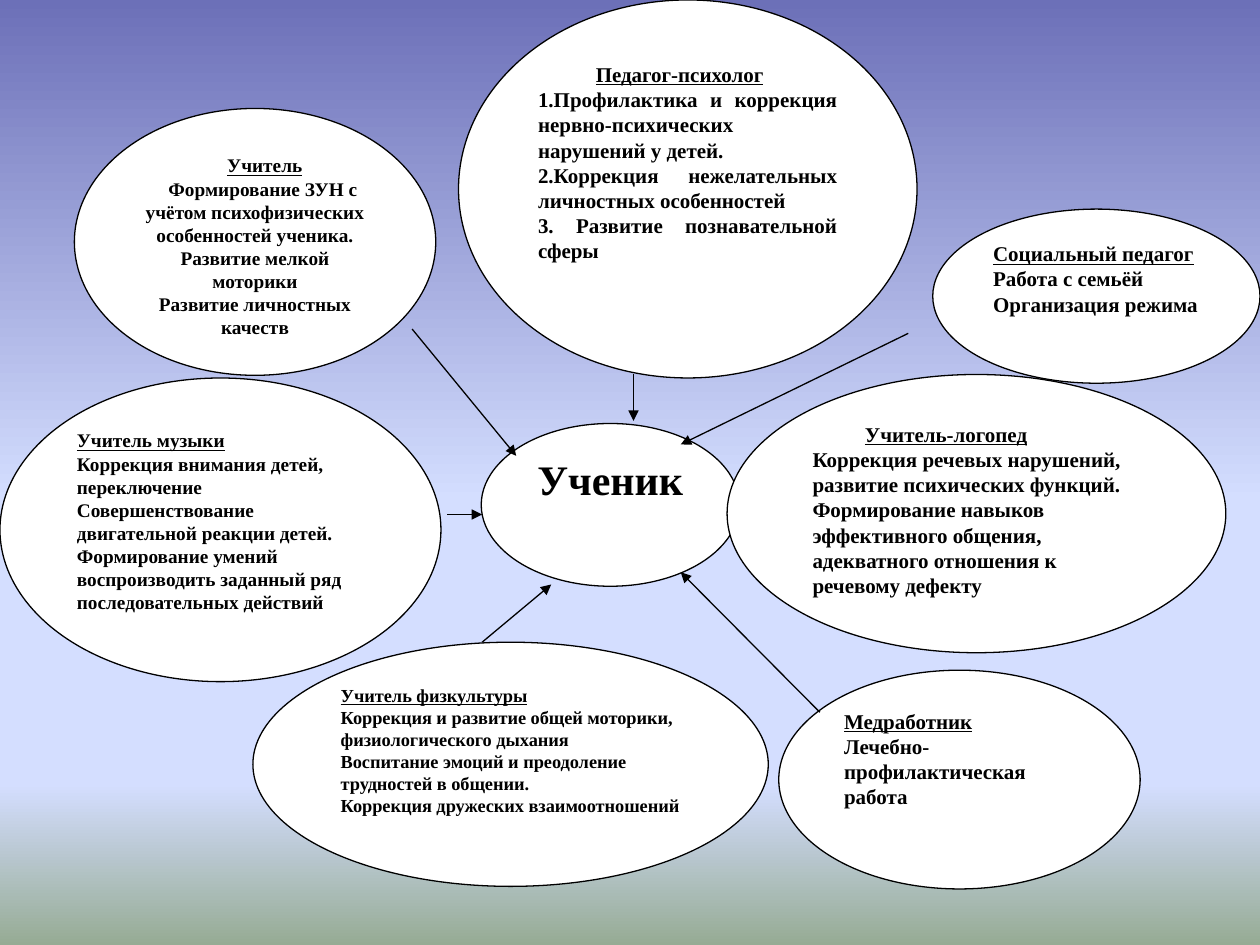
from lxml.etree import SubElement
from pptx import Presentation
from pptx.dml.color import RGBColor as RGB
from pptx.enum.shapes import MSO_CONNECTOR as CONN, MSO_SHAPE as SHAPE
from pptx.enum.text import MSO_ANCHOR as ANCHOR, PP_ALIGN as AL
from pptx.oxml.ns import qn
from pptx.util import Pt

COLORS = {"ink": "000000", "fill": "FFFFFF",
          "top": "6C70B8", "sky": "D4DEFF", "ground": "96AB94"}
FONT = "Times New Roman"
GRADIENT = [(0, "top"), (53, "sky"), (83, "sky"), (100, "ground")]
L, C, J = AL.LEFT, AL.CENTER, AL.JUSTIFY

# box, size, title, title align, title indent, title tab, body [(text, align, indent)]
PUPIL = {"box": (275, 242, 147.5, 93), "size": 24, "title": "Ученик",
         "align": C, "underline": False, "after": 10}
STAFF = [
    {"box": (415.5, 214, 285, 159), "size": 12, "title": "\tУчитель-логопед", "tab": 30,
     "body": [("Коррекция речевых нарушений, развитие психических функций.", L),
              ("Формирование навыков эффективного общения, "
               "адекватного отношения к речевому дефекту", L)]},
    {"box": (445, 383, 206.5, 125), "size": 12, "title": "Медработник",
     "body": [("Лечебно-профилактическая работа", L)]},
    {"box": (0, 216, 252, 173.5), "size": 11, "title": "Учитель музыки",
     "body": [("Коррекция внимания детей, переключение", L),
              ("Совершенствование двигательной реакции детей.", L),
              ("Формирование умений воспроизводить заданный ряд "
               "последовательных действий", L)]},
    {"box": (144.5, 367, 294.5, 139.5), "size": 10.5, "title": "Учитель физкультуры",
     "body": [("Коррекция и развитие общей моторики, физиологического дыхания", L),
              ("Воспитание эмоций и преодоление трудностей в общении.", L),
              ("Коррекция дружеских взаимоотношений", L)]},
    {"box": (262, 0, 262, 216), "size": 12, "title": "Педагог-психолог",
     "align": J, "indent": 33,
     "body": [("1.Профилактика и коррекция нервно-психических нарушений у детей.", J),
              ("2.Коррекция нежелательных личностных особенностей", J),
              ("3. Развитие познавательной сферы", J)]},
    {"box": (533, 119.5, 187, 99.5), "size": 12, "title": "Социальный педагог",
     "body": [("Работа с семьёй", J), ("Организация режима", J)]},
    {"box": (42.5, 62, 206.5, 152.5), "size": 11, "title": "\tУчитель",
     "align": J, "tab": 50, "body_indent": 9,
     "body": [("Формирование ЗУН с учётом психофизических особенностей ученика.", C),
              ("Развитие мелкой моторики", C), ("Развитие личностных качеств", C)]},
]
ARROWS = [((235.5, 188), (295, 260.5)), ((275.5, 367), (315, 334)),
          ((468.5, 407), (389, 327)), ((362, 214), (362, 240.5)),
          ((255.5, 294), (275.5, 294)), ((519, 190.5), (389, 254))]


def rgb(name):
    return RGB.from_string(COLORS[name])


def set_background(s):
    fill = s.background.fill
    fill.gradient()
    fill.gradient_angle = 270
    stops = s.element.xpath(".//a:gsLst")[0]
    for old in list(stops):
        stops.remove(old)
    for pos, name in GRADIENT:
        gs = SubElement(stops, qn("a:gs"), pos=str(pos * 1000))
        SubElement(gs, qn("a:srgbClr"), val=COLORS[name])


def set_indent(p, indent, tab=0):
    pPr = p._p.get_or_add_pPr()
    if indent:
        pPr.set("indent", str(Pt(indent)))
    if tab:
        tabs = SubElement(pPr, qn("a:tabLst"))
        SubElement(tabs, qn("a:tab"), pos=str(Pt(tab)), algn="l")


def add_oval(s, item):
    sp = s.shapes.add_shape(SHAPE.OVAL, *map(Pt, item["box"]))
    sp.shadow.inherit = False
    sp.fill.solid()
    sp.fill.fore_color.rgb = rgb("fill")
    sp.line.color.rgb = rgb("ink")
    sp.line.width = Pt(0.75)
    tf = sp.text_frame
    tf.word_wrap = True
    tf.vertical_anchor = ANCHOR.TOP
    lines = [(item["title"], item.get("align", L))] + item.get("body", [])
    tf.text = "\n".join(text for text, _ in lines)
    for i, (p, (_, align)) in enumerate(zip(tf.paragraphs, lines)):
        p.alignment = align
        p.space_after = Pt(item.get("after", 0))
        if i == 0:
            set_indent(p, item.get("indent", 0), item.get("tab", 0))
        elif i == 1:
            set_indent(p, item.get("body_indent", 0))
        for r in p.runs:
            r.font.name = FONT
            r.font.size = Pt(item["size"])
            r.font.bold = True
            r.font.underline = i == 0 and item.get("underline", True)
            r.font.color.rgb = rgb("ink")


def add_arrow(s, start, end):
    cn = s.shapes.add_connector(CONN.STRAIGHT, *map(Pt, start + end))
    cn.line.color.rgb = rgb("ink")
    cn.line.width = Pt(0.75)
    SubElement(cn.line._get_or_add_ln(), qn("a:tailEnd"), type="triangle")
    SubElement(cn._element.spPr, qn("a:effectLst"))


def main():
    prs = Presentation()
    prs.slide_width, prs.slide_height = Pt(720), Pt(540)
    s = prs.slides.add_slide(prs.slide_layouts[6])
    set_background(s)
    for item in [PUPIL] + STAFF:
        add_oval(s, item)
    for start, end in ARROWS:
        add_arrow(s, start, end)
    prs.save("out.pptx")


if __name__ == "__main__":
    main()
